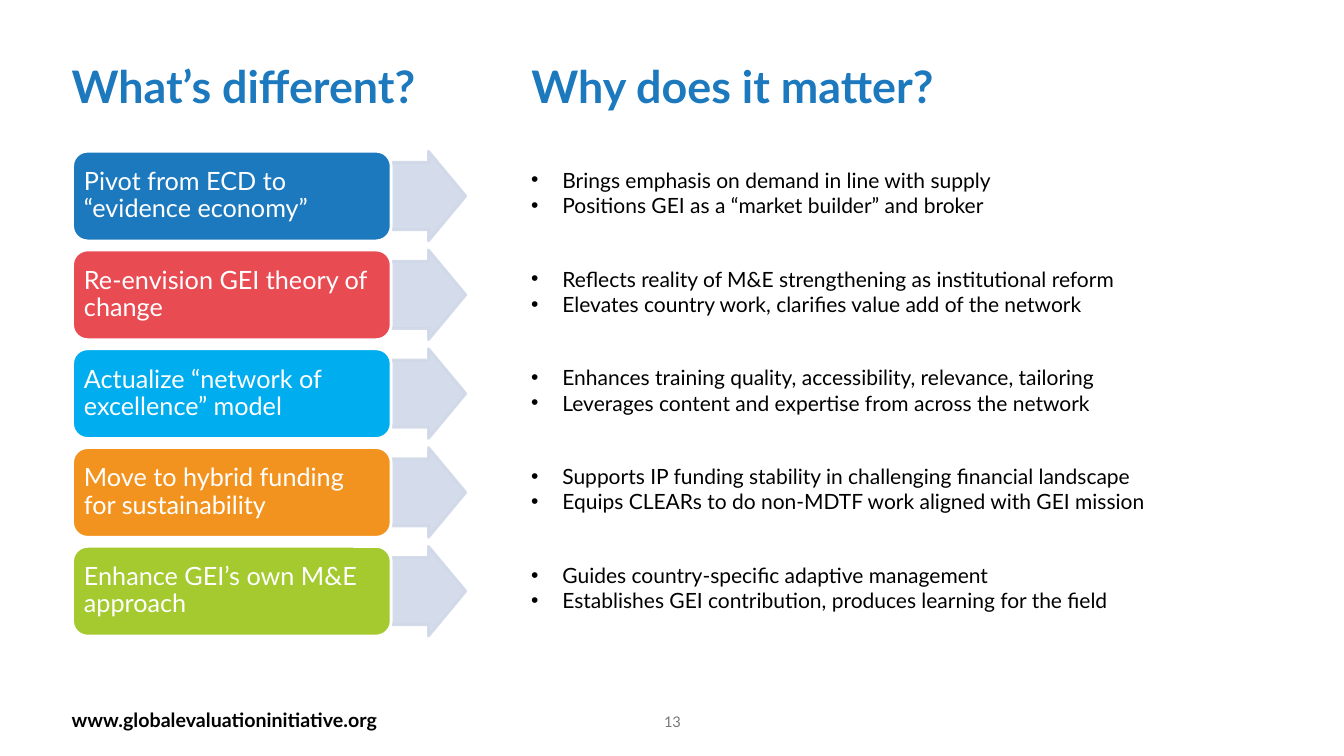
from dataclasses import dataclass

import lxml.etree
import pptx
import pptx.dml.color
import pptx.enum.shapes
import pptx.enum.text
import pptx.oxml.ns
import pptx.util

Inches = pptx.util.Inches
Pt = pptx.util.Pt
Shapes = pptx.enum.shapes.MSO_SHAPE
Align = pptx.enum.text.PP_ALIGN
Anchor = pptx.enum.text.MSO_ANCHOR

FONT = "Lato"
BLUE = "1C79BE"
PALE = "D0D8E8"
WHITE = "FFFFFF"
BLACK = "000000"
ROW_TOP = 1.5
ROW_PITCH = 0.98
ROW_HEIGHT = 0.89
REASONS_OFFSET = 0.11
BULLET_INDENT = 0.31


@dataclass(frozen=True)
class Change:
    headline: str
    color: str
    reasons: tuple[str, ...]


@dataclass(frozen=True)
class Label:
    text: str
    left: float
    top: float
    width: float
    height: float
    size: float
    color: str
    bold: bool = False
    margins: tuple[float, float, float, float] = (0.1, 0.05, 0.1, 0.05)
    anchor: Anchor = Anchor.MIDDLE
    align: Align = Align.LEFT


TITLE_MARGINS = (0, 0.05, 0.1, 0.05)
LABELS = (
    Label("What’s different?", 0.71, 0.44, 4, 0.81, 32, BLUE, True, TITLE_MARGINS),
    Label("Why does it matter?", 5.27, 0.44, 5.6, 0.81, 32, BLUE, True, TITLE_MARGINS),
    Label("www.globalevaluationinitiative.org", 0.71, 7.06, 3.79, 0.2, 14, BLACK, True,
          (0, 0, 0, 0), Anchor.TOP),
    Label("13", 5.17, 6.96, 3, 0.4, 10.5, "797979", align=Align.CENTER),
)

CHANGES = (
    Change("Pivot from ECD to “evidence economy”", BLUE, (
        "Brings emphasis on demand in line with supply",
        "Positions GEI as a “market builder” and broker")),
    Change("Re-envision GEI theory of change", "E94B52", (
        "Reflects reality of M&E strengthening as institutional reform",
        "Elevates country work, clarifies value add of the network")),
    Change("Actualize “network of excellence” model", "00ADEE", (
        "Enhances training quality, accessibility, relevance, tailoring",
        "Leverages content and expertise from across the network")),
    Change("Move to hybrid funding for sustainability", "F3931F", (
        "Supports IP funding stability in challenging financial landscape",
        "Equips CLEARs to do non-MDTF work aligned with GEI mission")),
    Change("Enhance GEI’s own M&E approach", "A4CA2F", (
        "Guides country-specific adaptive management",
        "Establishes GEI contribution, produces learning for the field")),
)


def rgb(color: str) -> pptx.dml.color.RGBColor:
    return pptx.dml.color.RGBColor.from_string(color)


def add_run(paragraph, text: str, size: float, color: str, bold: bool = False) -> None:
    run = paragraph.add_run()
    run.text = text
    run.font.name = FONT
    run.font.size = Pt(size)
    run.font.bold = bold
    run.font.color.rgb = rgb(color)


def set_frame(frame, margins: tuple[float, float, float, float], anchor: Anchor) -> None:
    frame.word_wrap = True
    frame.vertical_anchor = anchor
    (frame.margin_left, frame.margin_top,
     frame.margin_right, frame.margin_bottom) = map(Inches, margins)


def add_label(slide, label: Label) -> None:
    box = slide.shapes.add_textbox(
        Inches(label.left), Inches(label.top), Inches(label.width), Inches(label.height))
    set_frame(box.text_frame, label.margins, label.anchor)
    paragraph = box.text_frame.paragraphs[0]
    paragraph.alignment = label.align
    if label.anchor == Anchor.TOP:
        paragraph.line_spacing = Pt(13.9)
    add_run(paragraph, label.text, label.size, label.color, label.bold)


def add_block(slide, preset: Shapes, left: float, top: float, width: float,
              fill: str, line: str):
    block = slide.shapes.add_shape(
        preset, Inches(left), Inches(top), Inches(width), Inches(ROW_HEIGHT))
    block.shadow.inherit = False
    block.fill.solid()
    block.fill.fore_color.rgb = rgb(fill)
    block.line.color.rgb = rgb(line)
    block.line.width = Pt(2)
    return block


def add_arrow(slide, top: float) -> None:
    arrow = add_block(slide, Shapes.RIGHT_ARROW, 3.88, top, 0.74, PALE, PALE)
    arrow.adjustments[0] = 0.75
    arrow.adjustments[1] = 0.5
    qn = pptx.oxml.ns.qn
    for color in arrow.element.spPr.iter(qn("a:srgbClr")):
        lxml.etree.SubElement(color, qn("a:alpha"), val="90000")


def add_headline(slide, top: float, change: Change) -> None:
    card = add_block(slide, Shapes.ROUNDED_RECTANGLE, 0.72, top, 3.16, change.color, WHITE)
    set_frame(card.text_frame, (0.07, 0.04, 0.07, 0.04), Anchor.MIDDLE)
    paragraph = card.text_frame.paragraphs[0]
    paragraph.alignment = Align.LEFT
    paragraph.line_spacing = 0.9
    add_run(paragraph, change.headline, 18, WHITE)


def add_reasons(slide, top: float, reasons: tuple[str, ...]) -> None:
    box = slide.shapes.add_textbox(Inches(5.17), Inches(top), Inches(7.5), Inches(0.61))
    frame = box.text_frame
    set_frame(frame, (0.1, 0.05, 0.1, 0.05), Anchor.TOP)
    qn = pptx.oxml.ns.qn
    for index, reason in enumerate(reasons):
        paragraph = frame.add_paragraph() if index else frame.paragraphs[0]
        properties = paragraph._p.get_or_add_pPr()
        properties.set("marL", str(Inches(BULLET_INDENT)))
        properties.set("indent", str(-Inches(BULLET_INDENT)))
        lxml.etree.SubElement(properties, qn("a:buFont"), typeface="Arial")
        lxml.etree.SubElement(properties, qn("a:buChar"), char="•")
        add_run(paragraph, reason, 15, BLACK)


def main() -> None:
    deck = pptx.Presentation()
    deck.slide_width = Inches(13.33)
    deck.slide_height = Inches(7.5)
    slide = deck.slides.add_slide(deck.slide_layouts[6])
    for label in LABELS:
        add_label(slide, label)
    for row, change in enumerate(CHANGES):
        top = ROW_TOP + row * ROW_PITCH
        add_arrow(slide, top)
        add_headline(slide, top, change)
        add_reasons(slide, top + REASONS_OFFSET, change.reasons)
    deck.save("out.pptx")


if __name__ == "__main__":
    main()
